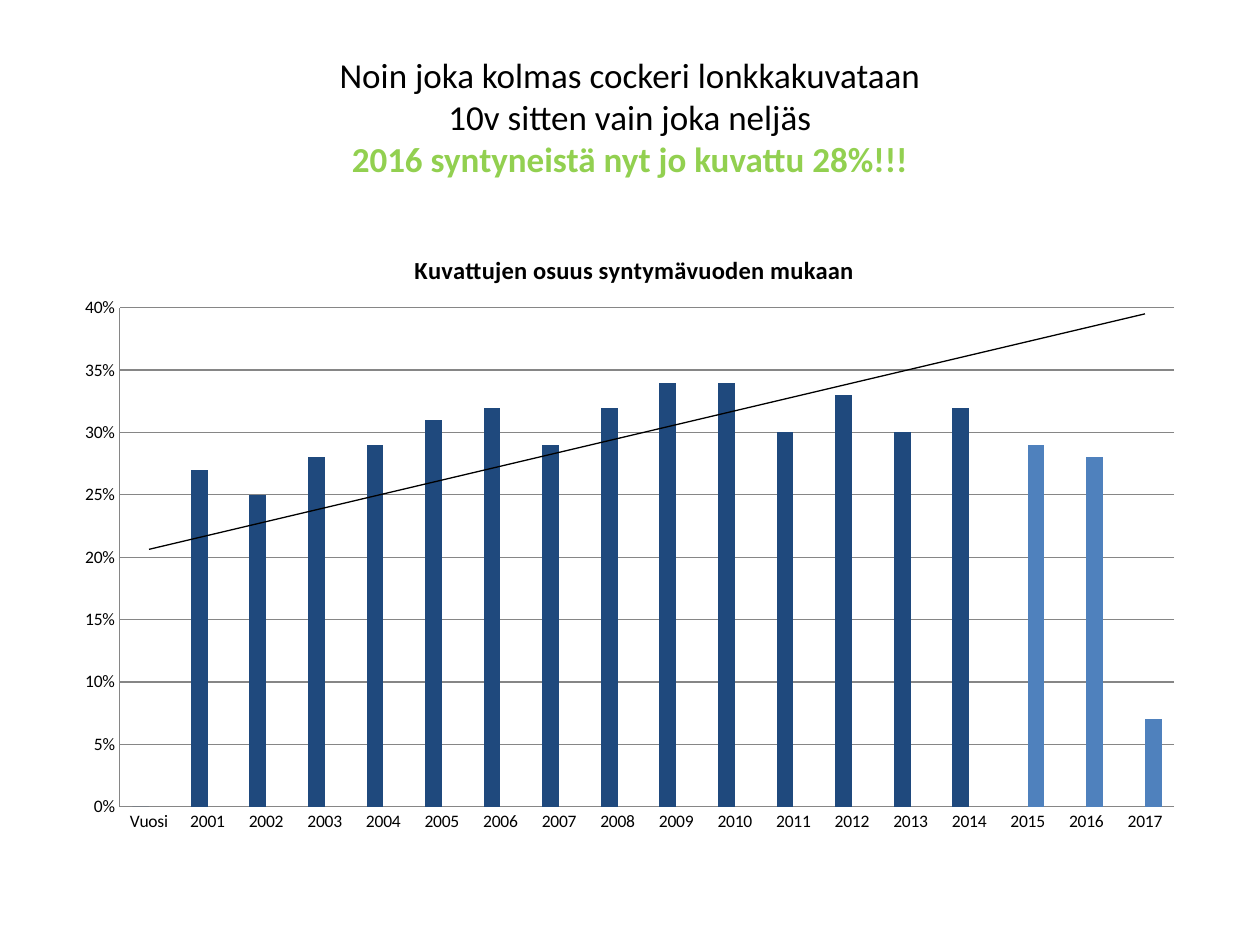
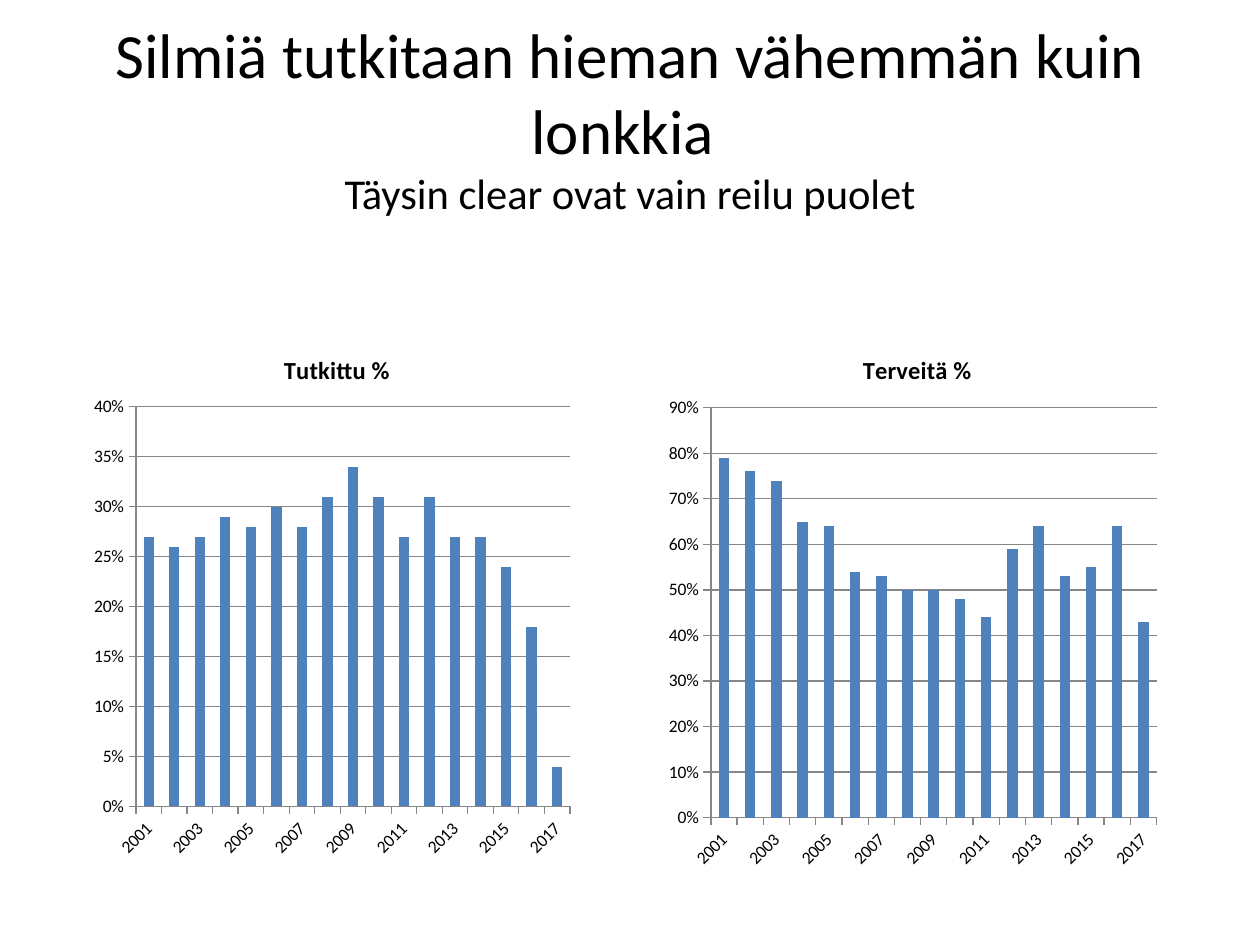
import pptx
import pptx.chart.data
import pptx.dml.color
import pptx.enum.chart
import pptx.enum.text
import pptx.oxml
import pptx.oxml.ns
import pptx.util

Inches, Pt = pptx.util.Inches, pptx.util.Pt
qn = pptx.oxml.ns.qn
TICK = pptx.enum.chart.XL_TICK_MARK
FONT = "Calibri"
HUES = {"text": "000000", "lime": "92D050", "navy": "1F497D",
        "blue": "4F81BD", "grid": "868686"}
YEARS = [str(year) for year in range(2001, 2018)]


def hue(name):
    return pptx.dml.color.RGBColor.from_string(HUES[name])


def style(font, size, color="text", bold=False):
    font.name, font.size, font.bold = FONT, Pt(size), bold
    font.color.rgb = hue(color)


def write(para, text, size=20, color="text", bold=False):
    """Add a run to a paragraph in the given format."""
    run = para.add_run()
    run.text = text
    style(run.font, size, color, bold)


def xml(body):
    return pptx.oxml.parse_xml(body.replace(
        ">", f' xmlns:c="{pptx.oxml.ns.nsuri("c")}"'
             f' xmlns:a="{pptx.oxml.ns.nsuri("a")}">', 1))


def place(node, after, inner=False, **spots):
    """Fix the place of a chart part, in fractions of the chart."""
    for old in node.findall(qn("c:layout")):
        node.remove(old)
    rows = '<c:layoutTarget val="inner"/>' if inner else ""
    rows += "".join(f'<c:{key}Mode val="edge"/>' for key in "xy")
    rows += "".join(f'<c:{key} val="{val}"/>' for key, val in spots.items())
    node.insert(after, xml("<c:layout><c:manualLayout>" + rows
                           + "</c:manualLayout></c:layout>"))


class Deck:
    def __init__(self):
        self.prs = pptx.Presentation()
        self.prs.slide_width, self.prs.slide_height = Inches(10), Inches(7.5)
        self.slide = None

    def page(self):
        self.slide = self.prs.slides.add_slide(self.prs.slide_layouts[5])

    def title(self, *lines):
        """Each line is a text and its format."""
        box = self.slide.shapes.title
        box.left, box.top = Inches(0.5), Inches(0.3)
        box.width, box.height = Inches(9), Inches(1.25)
        frame = box.text_frame
        frame.auto_size = pptx.enum.text.MSO_AUTO_SIZE.NONE
        frame.word_wrap = True
        frame.vertical_anchor = pptx.enum.text.MSO_ANCHOR.MIDDLE
        para = frame.paragraphs[0]
        para.alignment = pptx.enum.text.PP_ALIGN.CENTER
        for i, (text, form) in enumerate(lines):
            if i:
                para.add_line_break()
            write(para, text, **form)

    def chart(self, at, head, cats, series, plot, left, top, step,
              tick=TICK.OUTSIDE, turn=None):
        """Draw columns; series holds pairs of colour and values."""
        data = pptx.chart.data.CategoryChartData(number_format="0%")
        data.categories = cats
        for i, (_, vals) in enumerate(series, 1):
            data.add_series(f"Series {i}", vals)
        chart = self.slide.shapes.add_chart(
            pptx.enum.chart.XL_CHART_TYPE.COLUMN_CLUSTERED,
            *map(Inches, at), data).chart
        style(chart.font, 10)
        chart.has_legend = False

        # Heading and plot area
        chart.has_title = True
        write(chart.chart_title.text_frame.paragraphs[0], head,
              size=14, bold=True)
        area = chart.plots[0]
        area.gap_width, area.vary_by_categories = 150, False
        place(chart.chart_title._element, 1, x=left, y=0.045)
        place(chart._chartSpace.find(".//" + qn("c:plotArea")), 0, inner=True,
              **dict(zip("xywh", plot)))

        # Columns
        for bars, (color, _) in zip(area.series, series):
            bars.format.fill.solid()
            bars.format.fill.fore_color.rgb = hue(color)

        # Axes
        vals = chart.value_axis
        vals.minimum_scale, vals.maximum_scale = 0, top
        vals.major_unit = step
        vals.tick_labels.number_format = "0%"
        vals.tick_labels.number_format_is_linked = False
        vals.has_major_gridlines = True
        for axis in (vals, chart.category_axis):
            axis.major_tick_mark, axis.minor_tick_mark = tick, TICK.NONE
            style(axis.tick_labels.font, 10)
        for part in (vals, chart.category_axis, vals.major_gridlines):
            part.format.line.color.rgb = hue("grid")
            part.format.line.width = Pt(0.75)
        if turn is not None:
            body = chart.category_axis._element.find(
                qn("c:txPr")).find(qn("a:bodyPr"))
            body.set("rot", str(turn * 60000))
        return chart

    def trend(self, bars):
        """Add a straight trend line to a series."""
        bars._element.find(qn("c:cat")).addprevious(xml(
            '<c:trendline><c:spPr><a:ln w="9525"><a:solidFill>'
            f'<a:srgbClr val="{HUES["text"]}"/></a:solidFill></a:ln></c:spPr>'
            '<c:trendlineType val="linear"/><c:dispRSqr val="0"/>'
            '<c:dispEq val="0"/></c:trendline>'))


def main():
    deck = Deck()

    # Hips: share of dogs imaged
    deck.page()
    deck.title(("Noin joka kolmas cockeri lonkkakuvataan", {}),
               ("10v sitten vain joka neljäs", {}),
               ("2016 syntyneistä nyt jo kuvattu 28%!!!",
                dict(color="lime", bold=True)))
    done = [0, 0.27, 0.25, 0.28, 0.29, 0.31, 0.32, 0.29, 0.32, 0.34, 0.34,
            0.3, 0.33, 0.3, 0.32]
    late = [0.29, 0.28, 0.07]
    hips = deck.chart(
        (0.5, 1.75, 9, 4.95), "Kuvattujen osuus syntymävuoden mukaan",
        ["Vuosi"] + YEARS,
        [("navy", done + [None] * len(late)),
         ("blue", [None] * len(done) + late)],
        plot=(0.05, 0.14, 0.93, 0.8), left=0.306, top=0.4, step=0.05,
        tick=TICK.NONE)
    deck.trend(hips.plots[0].series[0])

    # Eyes: share examined and share healthy
    deck.page()
    deck.title(("Silmiä tutkitaan hieman vähemmän kuin lonkkia ",
                dict(size=36)),
               ("Täysin clear ovat vain reilu puolet", dict(size=24.3)))
    seen = [0.27, 0.26, 0.27, 0.29, 0.28, 0.3, 0.28, 0.31, 0.34, 0.31, 0.27,
            0.31, 0.27, 0.27, 0.24, 0.18, 0.04]
    well = [0.79, 0.76, 0.74, 0.65, 0.64, 0.54, 0.53, 0.5, 0.5, 0.48, 0.44,
            0.59, 0.64, 0.53, 0.55, 0.64, 0.43]
    deck.chart((0.67, 2.57, 3.94, 4.33), "Tutkittu %", YEARS,
               [("blue", seen)], plot=(0.104, 0.152, 0.874, 0.733),
               left=0.393, top=0.4, step=0.05, turn=-45)
    deck.chart((5.24, 2.57, 4.02, 4.41), "Terveitä %", YEARS,
               [("blue", well)], plot=(0.1, 0.151, 0.88, 0.738),
               left=0.391, top=0.9, step=0.1, turn=-45)

    deck.prs.save("out.pptx")


if __name__ == "__main__":
    main()
